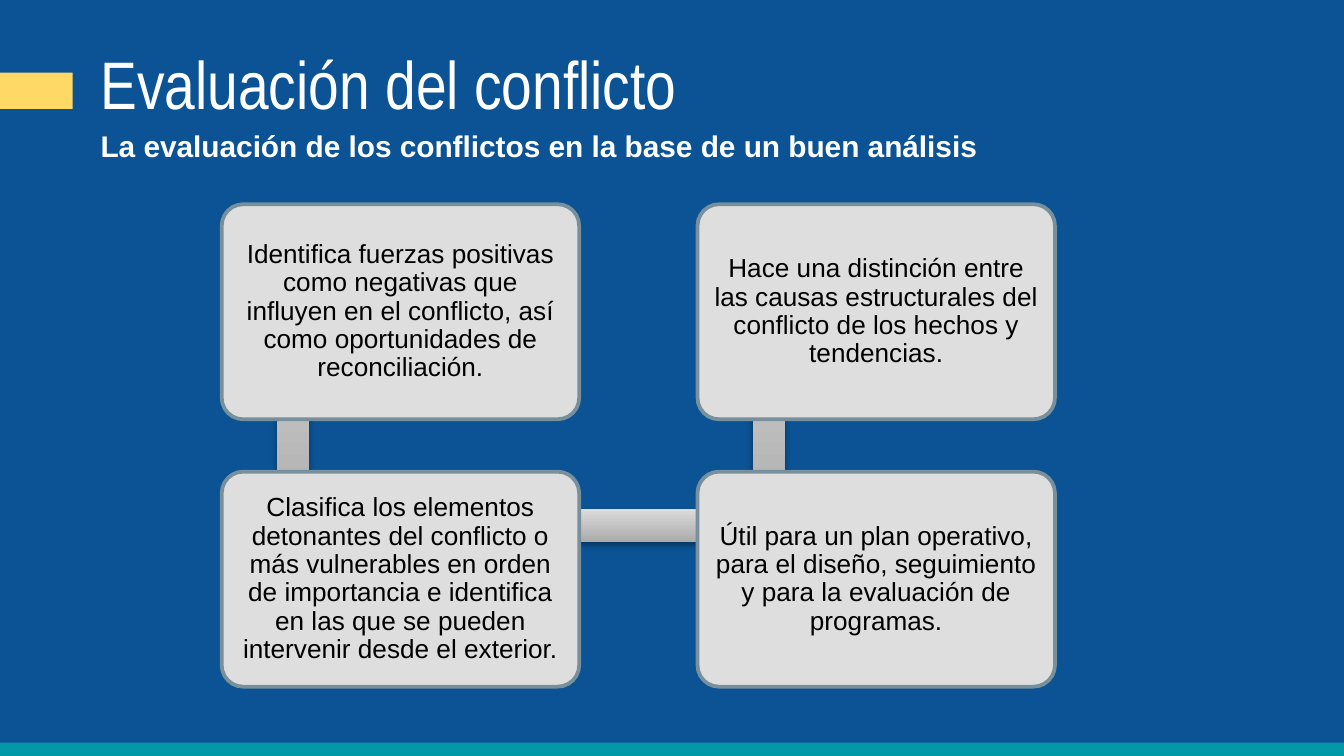
from lxml.etree import SubElement
from pptx import Presentation
from pptx.dml.color import RGBColor
from pptx.enum.shapes import MSO_SHAPE as Shape
from pptx.enum.text import MSO_ANCHOR as Anchor, PP_ALIGN as Align
from pptx.oxml.ns import qn
from pptx.util import Inches, Pt

NAVY = RGBColor(0x0B, 0x53, 0x94)
YELLOW = RGBColor(0xFF, 0xD9, 0x66)
TEAL = RGBColor(0x00, 0x97, 0xA7)
WHITE = RGBColor(0xFF, 0xFF, 0xFF)
BLACK = RGBColor(0x00, 0x00, 0x00)
CARD_GREY = RGBColor(0xDE, 0xDE, 0xDE)
BORDER_GREY = RGBColor(0x78, 0x90, 0x9C)
BAR_DARK = RGBColor(0xAC, 0xAC, 0xAC)
BAR_LIGHT = RGBColor(0xDB, 0xDB, 0xDB)

WIDTH = 10
HEIGHT = WIDTH * 9 / 16
CARD_WIDTH, CARD_HEIGHT = 2.66, 1.6
COLUMN_STEP, ROW_STEP = 3.54, 1.99
BAR_THICKNESS = 0.24

TITLE_FONT = {"name": "Arial Narrow", "size": Pt(36)}
SUBTITLE_FONT = {"name": "Arial", "size": Pt(16), "bold": True}
CARD_FONT = {"name": "Arial", "size": Pt(14)}

CARDS = {
    (0, 0): "Identifica fuerzas positivas como negativas que influyen en el "
            "conflicto, así como oportunidades de reconciliación.",
    (0, 1): "Clasifica los elementos detonantes del conflicto o más vulnerables en "
            "orden de importancia e identifica en las que se pueden intervenir "
            "desde el exterior.",
    (1, 1): "Útil para un plan operativo, para el diseño, seguimiento y para la "
            "evaluación de programas.",
    (1, 0): "Hace una distinción entre las causas estructurales del conflicto de "
            "los hechos y tendencias.",
}


def set_values(target, values):
    """Set each attribute named in values on the target."""
    for name, value in values.items():
        setattr(target, name, value)


def write_text(shape, text, font, color, inset, paragraph_format, anchor=Anchor.TOP):
    """Write one formatted paragraph in the shape."""
    frame = shape.text_frame
    margins = dict.fromkeys(
        ("margin_left", "margin_top", "margin_right", "margin_bottom"), Inches(inset))
    set_values(frame, {"word_wrap": True, "vertical_anchor": anchor, **margins})
    paragraph = frame.paragraphs[0]
    set_values(paragraph, paragraph_format)
    run = paragraph.add_run()
    run.text = text
    set_values(run.font, font)
    run.font.color.rgb = color


def add_block(slide, kind, box, fill=None):
    """Add a borderless shape without a shadow, filled if a colour is given."""
    shape = slide.shapes.add_shape(kind, *map(Inches, box))
    shape.shadow.inherit = False
    shape.line.fill.background()
    if fill is not None:
        shape.fill.solid()
        shape.fill.fore_color.rgb = fill
    return shape


def add_bar(slide, center_x, center_y, length, rotation=0):
    """Add a shaded link bar, light at the top of the slide at any rotation."""
    box = (center_x - length / 2, center_y - BAR_THICKNESS / 2, length, BAR_THICKNESS)
    bar = add_block(slide, Shape.RECTANGLE, box)
    bar.rotation = rotation
    bar.fill.gradient()
    bar.fill.gradient_angle = (90 + rotation) % 360
    for stop, color, position in zip(
            bar.fill.gradient_stops, (BAR_DARK, BAR_LIGHT), (0, 1)):
        stop.position = position
        stop.color.rgb = color
    effects = bar._element.spPr.find(qn("a:effectLst"))
    shadow = SubElement(effects, qn("a:outerShdw"), blurRad=str(Pt(3.1)),
                        dist=str(Pt(1.8)), dir="5400000", rotWithShape="0")
    color = SubElement(shadow, qn("a:srgbClr"), val=str(BLACK))
    SubElement(color, qn("a:alpha"), val="35000")


def add_card(slide, left, top, text):
    """Add a rounded card with centred text."""
    box = (left, top, CARD_WIDTH, CARD_HEIGHT)
    card = add_block(slide, Shape.ROUNDED_RECTANGLE, box, CARD_GREY)
    card.adjustments[0] = 0.1
    card.line.color.rgb = BORDER_GREY
    card.line.width = Pt(2)
    write_text(card, text, CARD_FONT, BLACK, 0.06,
               {"alignment": Align.CENTER, "line_spacing": 0.9, "space_after": Pt(5)},
               Anchor.MIDDLE)


def add_card_chain(slide, left, top):
    """Add the two-by-two chain of cards, with its link bars behind."""
    bar_x, bar_y = left + 0.53, top + 2.39
    middle_y = top + 1.39
    add_bar(slide, bar_x, middle_y, ROW_STEP, 90)
    add_bar(slide, bar_x + COLUMN_STEP / 2, bar_y, COLUMN_STEP)
    add_bar(slide, bar_x + COLUMN_STEP, middle_y, ROW_STEP, 270)
    for (column, row), text in CARDS.items():
        add_card(slide, left + column * COLUMN_STEP, top + row * ROW_STEP, text)


def add_heading(slide, left, top):
    """Add the accent mark, the title and the subtitle."""
    title = slide.shapes.add_textbox(*map(Inches, (left, top, 8.19, 0.97)))
    write_text(title, "Evaluación del conflicto", TITLE_FONT, WHITE, 0.1,
               {"line_spacing": 0.9})
    subtitle = slide.shapes.add_textbox(*map(Inches, (left, top + 0.53, 7.26, 0.58)))
    write_text(subtitle, "La evaluación de los conflictos en la base de un buen análisis",
               SUBTITLE_FONT, WHITE, 0.1,
               {"alignment": Align.JUSTIFY, "line_spacing": 1.15})
    add_block(slide, Shape.RECTANGLE, (left - 0.76, top + 0.26, 0.65, 0.27), YELLOW)


def main():
    """Build and save the slide."""
    presentation = Presentation()
    set_values(presentation, {"slide_width": Inches(WIDTH), "slide_height": Inches(HEIGHT)})
    slide = presentation.slides.add_slide(presentation.slide_layouts[6])
    slide.background.fill.solid()
    slide.background.fill.fore_color.rgb = NAVY
    add_heading(slide, 0.65, 0.28)
    add_block(slide, Shape.RECTANGLE, (0, HEIGHT - 0.1, WIDTH, 0.1), TEAL)
    add_card_chain(slide, 1.65, 1.52)
    presentation.save("out.pptx")


if __name__ == "__main__":
    main()
